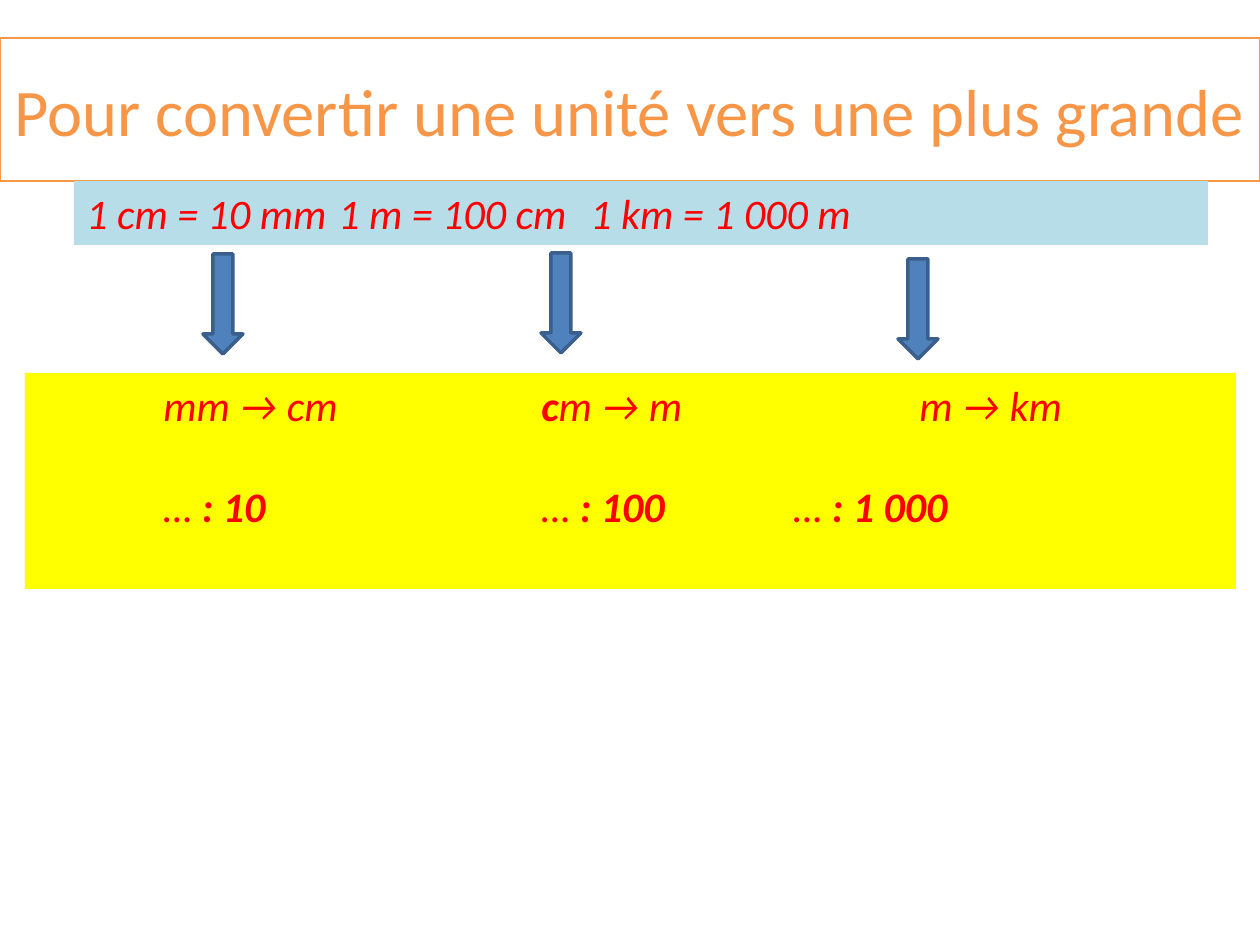
from dataclasses import dataclass

from pptx import Presentation
from pptx.dml.color import RGBColor
from pptx.enum.shapes import MSO_SHAPE as Kind
from pptx.enum.text import MSO_ANCHOR as Anchor, PP_ALIGN as Align
from pptx.util import Emu, Pt

PX = 914400 / 126
TAB = 126
FONT = "Calibri"
ORANGE = RGBColor(0xF7, 0x96, 0x46)
RED = RGBColor(0xFF, 0x00, 0x00)
SKY = RGBColor(0xB7, 0xDE, 0xE8)
YELLOW = RGBColor(0xFF, 0xFF, 0x00)
BLUE = RGBColor(0x4F, 0x81, 0xBD)
NAVY = RGBColor(0x3A, 0x5F, 0x8C)


@dataclass
class Run:
    text: str
    bold: bool = False


@dataclass
class Box:
    left: int
    top: int
    width: int
    height: int
    fill: RGBColor | None = None
    line: RGBColor | None = None
    weight: float = 0.75
    kind: Kind = Kind.RECTANGLE


@dataclass
class Style:
    size: int
    color: RGBColor
    italic: bool = False
    align: Align = Align.LEFT
    anchor: Anchor = Anchor.TOP
    gap: int = 0


def px(n: int) -> Emu:
    return Emu(round(n * PX))


def draw(slide, box: Box):
    shape = slide.shapes.add_shape(
        box.kind, px(box.left), px(box.top), px(box.width), px(box.height))
    shape.shadow.inherit = False
    if box.fill is None:
        shape.fill.background()
    else:
        shape.fill.solid()
        shape.fill.fore_color.rgb = box.fill
    if box.line is None:
        shape.line.fill.background()
    else:
        shape.line.color.rgb = box.line
        shape.line.width = Pt(box.weight)
    return shape


def write(shape, rows: list[list[Run]], style: Style) -> None:
    frame = shape.text_frame
    frame.word_wrap = True
    frame.vertical_anchor = style.anchor
    for i, row in enumerate(rows):
        para = frame.add_paragraph() if i else frame.paragraphs[0]
        para.alignment = style.align
        para.space_before = Pt(style.gap if i else 0)
        # Even tab stops
        para._p.get_or_add_pPr().set("defTabSz", str(px(TAB)))
        for part in row:
            run = para.add_run()
            run.text = part.text
            font = run.font
            font.name, font.size = FONT, Pt(style.size)
            font.bold, font.italic = part.bold, style.italic
            font.color.rgb = style.color


# Boxes and their text
TITLE = Box(0, 38, 1260, 143, line=ORANGE)
FACTS = Box(74, 181, 1134, 64, fill=SKY)
RULES = Box(25, 373, 1211, 216, fill=YELLOW)
HEAD = Style(38, ORANGE, align=Align.CENTER, anchor=Anchor.MIDDLE)
BODY = Style(24, RED, italic=True, gap=29)

TITLE_ROWS = [[Run("Pour convertir une unité vers une plus grande")]]
FACT_ROWS = [[Run("1 cm = 10 mm \t1 m = 100 cm\t1 km = 1 000 m")]]
RULE_ROWS = [
    [Run("\tmm → cm "), Run("\t \tc", True), Run("m → m \t \tm → km")],
    [Run("\t… "), Run(": 10\t \t", True), Run(" \t… "),
     Run(": 100\t\t", True), Run("… "), Run(": 1 000", True)],
]

# Arrows from each fact to its rule: left, top
ARROWS = [(203, 254), (541, 253), (898, 259)]


def main() -> None:
    deck = Presentation()
    deck.slide_width, deck.slide_height = px(1260), px(945)
    slide = deck.slides.add_slide(deck.slide_layouts[6])

    for box, rows, style in [(TITLE, TITLE_ROWS, HEAD),
                             (FACTS, FACT_ROWS, BODY),
                             (RULES, RULE_ROWS, BODY)]:
        write(draw(slide, box), rows, style)

    for left, top in ARROWS:
        draw(slide, Box(left, top, 40, 100, BLUE, NAVY, 2, Kind.DOWN_ARROW))

    deck.save("out.pptx")


if __name__ == "__main__":
    main()
